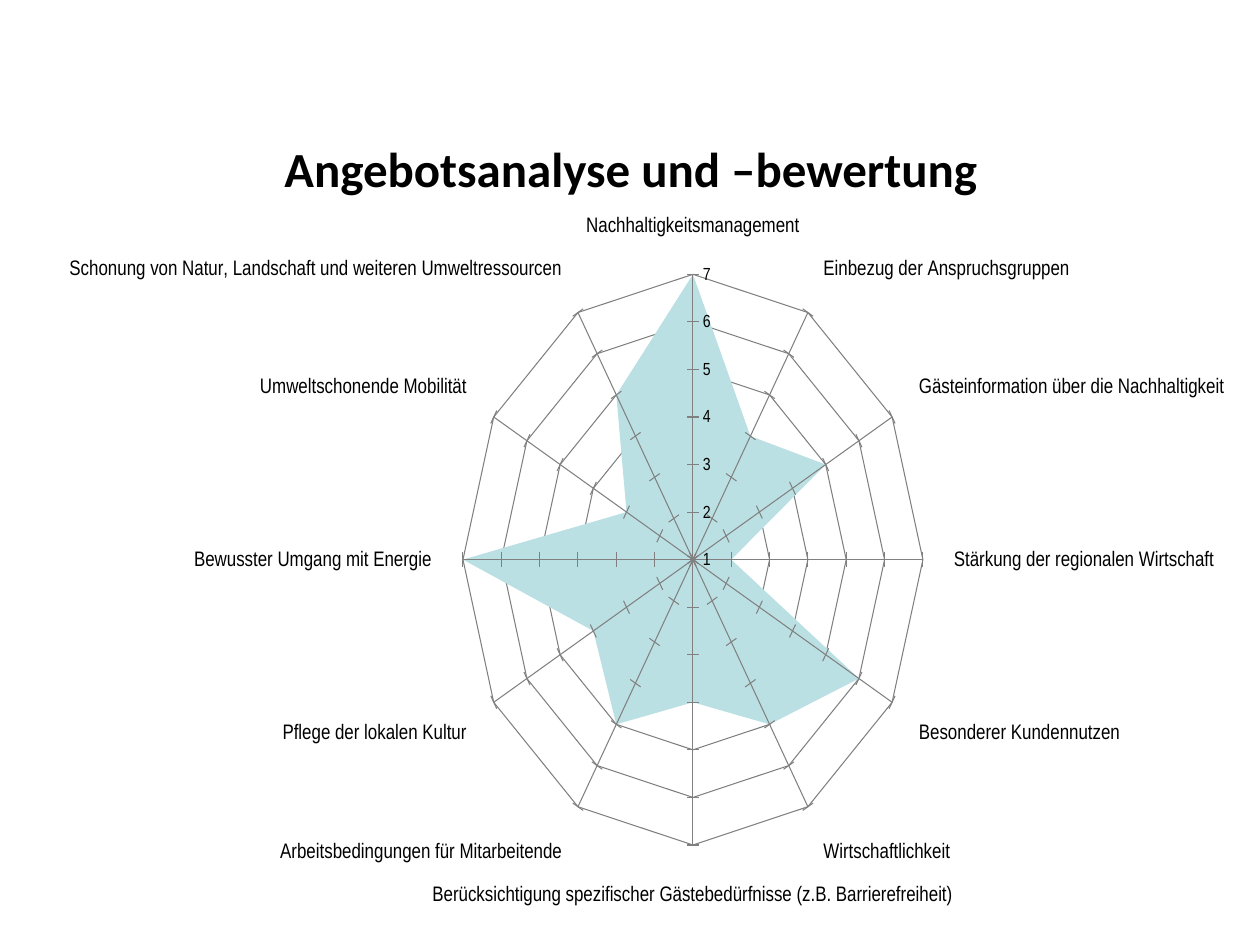
"""Build a slide with a filled radar chart that rates an offer on twelve criteria."""
from typing import NamedTuple

from lxml import etree
from pptx import Presentation
from pptx.chart.data import CategoryChartData
from pptx.dml.color import RGBColor
from pptx.enum.chart import XL_CHART_TYPE, XL_TICK_MARK
from pptx.enum.text import MSO_ANCHOR, PP_ALIGN
from pptx.oxml.ns import qn
from pptx.util import Cm, Pt

RADAR_FILLED = XL_CHART_TYPE.RADAR_FILLED
TICK_CROSS, TICK_OUTSIDE = XL_TICK_MARK.CROSS, XL_TICK_MARK.OUTSIDE
MIDDLE, CENTER = MSO_ANCHOR.MIDDLE, PP_ALIGN.CENTER
COLORS = {"text": "000000", "grid": "808080", "area": "BBE0E3"}
PLOT_LAYOUT = {"layoutTarget": "inner", "xMode": "edge", "yMode": "edge",
               "x": 0.255, "y": 0.128, "w": 0.494, "h": 0.765}


class Criterion(NamedTuple):
    """One spoke of the radar."""
    label: str
    score: int


CRITERIA = [
    Criterion("Nachhaltigkeitsmanagement", 7),
    Criterion("Einbezug der Anspruchsgruppen", 4),
    Criterion("Gästeinformation über die Nachhaltigkeit", 5),
    Criterion("Stärkung der regionalen Wirtschaft", 2),
    Criterion("Besonderer Kundennutzen", 6),
    Criterion("Wirtschaftlichkeit", 5),
    Criterion("Berücksichtigung spezifischer Gästebedürfnisse (z.B. Barrierefreiheit)", 4),
    Criterion("Arbeitsbedingungen für Mitarbeitende", 5),
    Criterion("Pflege der lokalen Kultur", 4),
    Criterion("Bewusster Umgang mit Energie", 7),
    Criterion("Umweltschonende Mobilität", 3),
    Criterion("Schonung von Natur, Landschaft und weiteren Umweltressourcen", 5),
]


def color(name: str) -> RGBColor:
    """Look up a colour by its role."""
    return RGBColor.from_string(COLORS[name])


def style_font(font, name: str, size: float, bold: bool = False) -> None:
    """Set face, size, weight and text colour."""
    font.name, font.size, font.bold = name, Pt(size), bold
    font.color.rgb = color("text")


def style_line(line) -> None:
    """Give an axis or grid line the thin grey stroke."""
    line.color.rgb = color("grid")
    line.width = Pt(0.75)


def style_axis(axis, size: float, tick_mark) -> None:
    """Set labels, ticks and grid of one radar axis."""
    axis.has_major_gridlines = True
    axis.major_tick_mark = tick_mark
    axis.tick_labels.number_format = "General"
    axis.tick_labels.number_format_is_linked = False
    style_font(axis.tick_labels.font, "Arial", size)
    style_line(axis.format.line)
    style_line(axis.major_gridlines.format.line)


def place_plot(chart) -> None:
    """Fix the inner plot area inside the chart frame."""
    plot_area = chart.plots[0]._element.getparent()
    layout = plot_area.find(qn("c:layout"))
    if layout is None:
        layout = etree.Element(qn("c:layout"))
        plot_area.insert(0, layout)
    for child in list(layout):
        layout.remove(child)
    manual = etree.SubElement(layout, qn("c:manualLayout"))
    for tag, value in PLOT_LAYOUT.items():
        etree.SubElement(manual, qn(f"c:{tag}")).set("val", str(value))


def add_title(page, text: str) -> None:
    """Add the centred heading."""
    box = page.shapes.add_textbox(Cm(1.4), Cm(2.39), Cm(22.63), Cm(1.98))
    frame = box.text_frame
    frame.word_wrap = True
    frame.vertical_anchor = MIDDLE
    para = frame.paragraphs[0]
    para.text = text
    para.alignment = CENTER
    style_font(para.font, "Calibri", 28, bold=True)


def add_radar(page, criteria: list[Criterion]) -> None:
    """Add the radar chart of all criteria."""
    data = CategoryChartData()
    data.categories = [criterion.label for criterion in criteria]
    data.add_series("Series 1", [criterion.score for criterion in criteria])
    chart = page.shapes.add_chart(
        RADAR_FILLED, Cm(1.4), Cm(3.53), Cm(23.29), Cm(15.19), data).chart
    chart.has_title = False
    chart.has_legend = False
    style_font(chart.font, "Arial", 10)
    style_axis(chart.category_axis, 12, TICK_OUTSIDE)
    scale = chart.value_axis
    style_axis(scale, 10, TICK_CROSS)
    scale.minimum_scale, scale.maximum_scale, scale.major_unit = 1, 7, 1
    plot = chart.plots[0]
    plot.vary_by_categories = False
    series = plot.series[0]
    series.smooth = False
    series.format.fill.solid()
    series.format.fill.fore_color.rgb = color("area")
    series.format.line.fill.background()
    place_plot(chart)


def main() -> None:
    """Build and save the deck."""
    deck = Presentation()
    deck.slide_width, deck.slide_height = Cm(25.4), Cm(19.05)
    page = deck.slides.add_slide(deck.slide_layouts[6])
    add_title(page, "Angebotsanalyse und –bewertung")
    add_radar(page, CRITERIA)
    deck.save("out.pptx")


if __name__ == "__main__":
    main()
